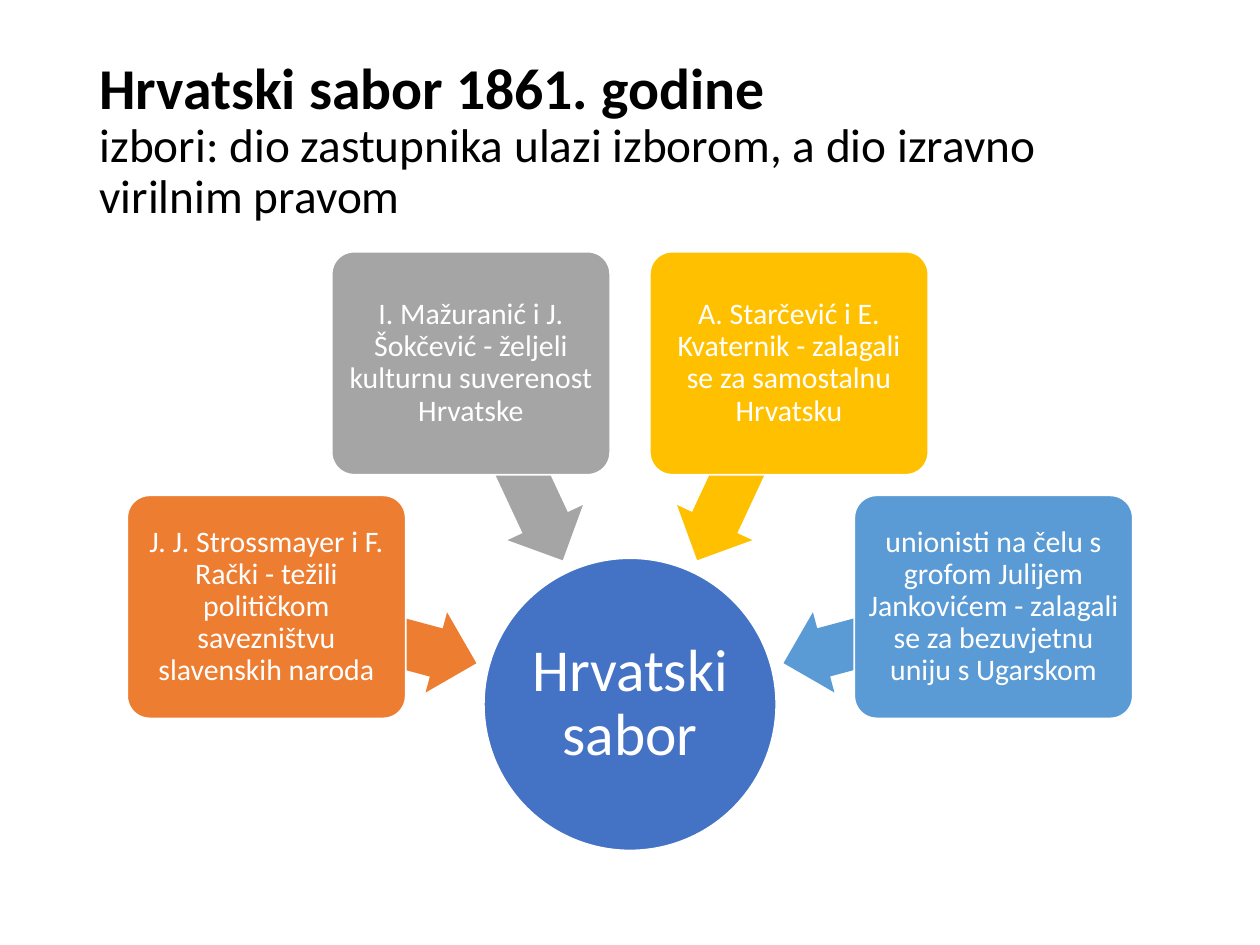
"""Build the slide on the Croatian parliament of 1861 as a hub with four groups."""
from dataclasses import dataclass
from math import cos, radians, sin

from lxml.etree import SubElement
from pptx import Presentation
from pptx.dml.color import RGBColor
from pptx.enum.shapes import MSO_SHAPE
from pptx.enum.text import MSO_ANCHOR, MSO_AUTO_SIZE, PP_ALIGN
from pptx.oxml.ns import qn
from pptx.util import Inches, Pt

WIDE, HIGH = Inches(10), Inches(7.5)
FONT = "Calibri"
BLACK = RGBColor(0x00, 0x00, 0x00)
WHITE = RGBColor(0xFF, 0xFF, 0xFF)
BLUE = RGBColor(0x44, 0x72, 0xC4)
ORANGE = RGBColor(0xED, 0x7D, 0x31)
GREY = RGBColor(0xA5, 0xA5, 0xA5)
GOLD = RGBColor(0xFF, 0xC0, 0x00)
SKY = RGBColor(0x5B, 0x9B, 0xD5)
HUB_X, HUB_Y = 0.5, 0.559
ARROW_REACH, GROUP_REACH = 0.2127, 0.2987
FIRST, STEP = 195, 50


@dataclass(frozen=True)
class Group:
    text: str
    fill: RGBColor


GROUPS = (
    Group("J. J. Strossmayer i F. Rački - težili političkom savezništvu slavenskih naroda", ORANGE),
    Group("I. Mažuranić i J. Šokčević - željeli kulturnu suverenost Hrvatske", GREY),
    Group("A. Starčević i E. Kvaternik - zalagali se za samostalnu Hrvatsku", GOLD),
    Group("unionisti na čelu s grofom Julijem Jankovićem - zalagali se za bezuvjetnu uniju s Ugarskom", SKY),
)


def share(part: float) -> int:
    """Turn a share of the slide's width into a length."""
    return round(WIDE * part)


def add_run(para, text: str, size: float, color: RGBColor, bold: bool = False) -> None:
    """Add one formatted run."""
    run = para.add_run()
    run.text = text
    font = run.font
    font.name, font.size, font.bold = FONT, Pt(size), bold
    font.color.rgb = color


def add_part(slide, kind, angle: float, reach: float, wide: float, high: float, fill: RGBColor):
    """Add a filled shape centred at an angle and distance from the hub."""
    x = HUB_X + reach * cos(radians(angle))
    y = HUB_Y + reach * sin(radians(angle))
    part = slide.shapes.add_shape(
        kind, share(x - wide / 2), share(y - high / 2), share(wide), share(high))
    part.shadow.inherit = False
    part.fill.solid()
    part.fill.fore_color.rgb = fill
    part.line.fill.background()
    return part


def add_label(part, text: str, size: float, inset: float) -> None:
    """Give a shape its white outline and centred text."""
    part.line.color.rgb = WHITE
    part.line.width = Pt(1)
    frame = part.text_frame
    frame.word_wrap = True
    frame.vertical_anchor = MSO_ANCHOR.MIDDLE
    frame.margin_left = frame.margin_right = share(inset)
    frame.margin_top = frame.margin_bottom = share(inset)
    para = frame.paragraphs[0]
    para.alignment = PP_ALIGN.CENTER
    para.line_spacing = 0.9
    add_run(para, text, size, WHITE)


def add_title(slide) -> None:
    """Place and fill the title."""
    title = slide.shapes.title
    title.left, title.top = share(0.069), share(0.04)
    title.width, title.height = share(0.862), share(0.145)
    frame = title.text_frame
    frame.word_wrap = True
    frame.auto_size = MSO_AUTO_SIZE.NONE
    frame.vertical_anchor = MSO_ANCHOR.MIDDLE
    para = frame.paragraphs[0]
    para.alignment = PP_ALIGN.LEFT
    para.line_spacing = 0.9
    add_run(para, "Hrvatski sabor 1861. godine", 33, BLACK, True)
    para.add_line_break()
    SubElement(para._p.find(qn("a:br")), qn("a:rPr"), sz="3300")
    add_run(para, "izbori: dio zastupnika ulazi izborom, a dio izravno virilnim pravom", 27, BLACK)


def add_group(slide, group: Group, angle: float) -> None:
    """Add a group's box and its arrow towards the hub."""
    arrow = add_part(slide, MSO_SHAPE.LEFT_ARROW, angle, ARROW_REACH, 0.173, 0.066, group.fill)
    arrow.rotation = angle
    arrow.adjustments[0], arrow.adjustments[1] = 0.6, 0.5
    box = add_part(slide, MSO_SHAPE.ROUNDED_RECTANGLE, angle, GROUP_REACH, 0.221, 0.177, group.fill)
    box.adjustments[0] = 0.1
    add_label(box, group.text, 17, 0.004)


def main() -> None:
    """Build and save the slide."""
    deck = Presentation()
    deck.slide_width, deck.slide_height = WIDE, HIGH
    slide = deck.slides.add_slide(deck.slide_layouts[5])
    add_title(slide)
    hub = add_part(slide, MSO_SHAPE.OVAL, 0, 0, 0.232, 0.232, BLUE)
    add_label(hub, "Hrvatski sabor", 34, 0.002)
    for rank, group in enumerate(GROUPS):
        add_group(slide, group, FIRST + rank * STEP)
    deck.save("out.pptx")


if __name__ == "__main__":
    main()
